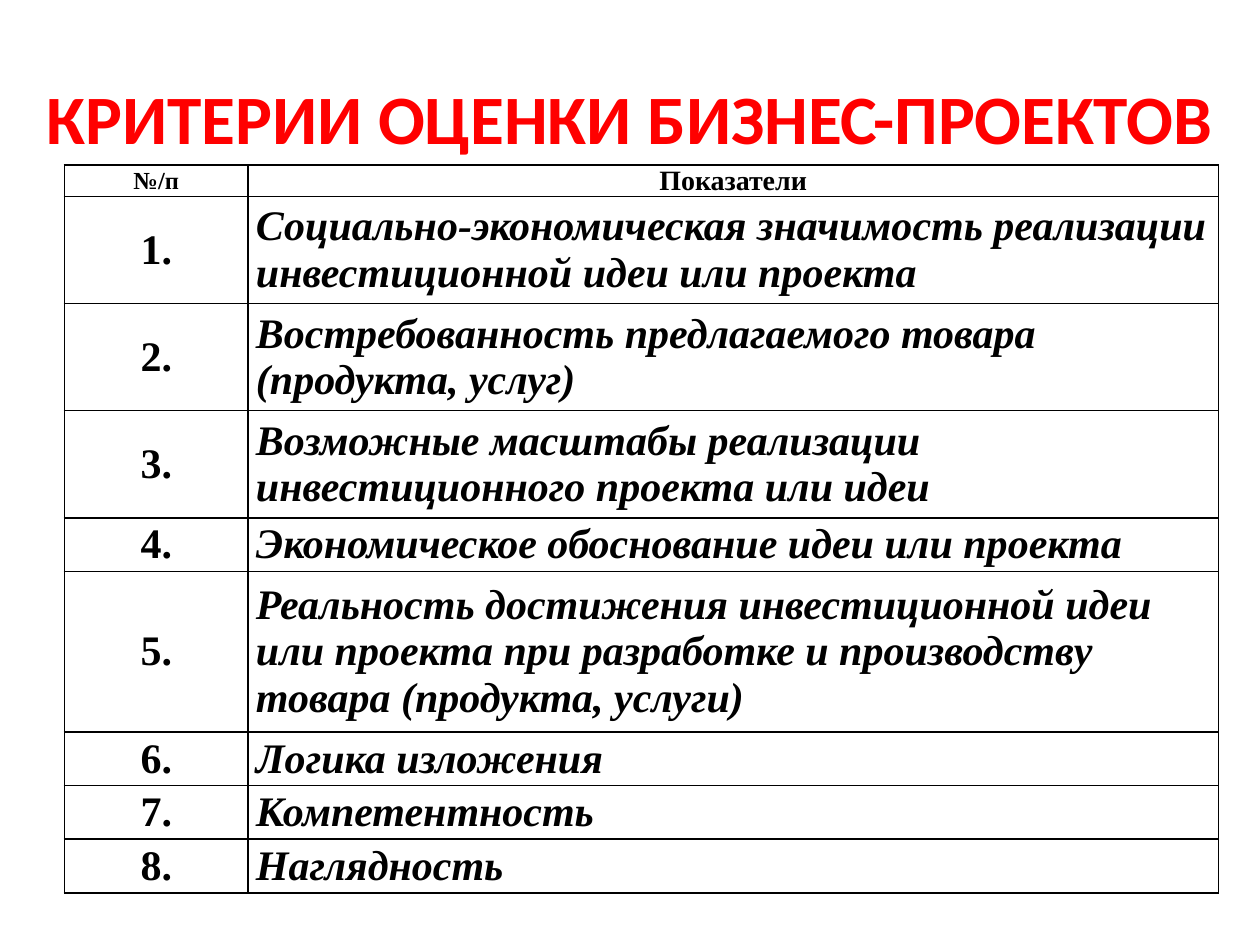
from dataclasses import dataclass

from lxml.etree import SubElement
from pptx import Presentation
from pptx.dml.color import RGBColor
from pptx.enum.text import MSO_ANCHOR, PP_ALIGN
from pptx.oxml.ns import qn
from pptx.util import Cm, Pt


@dataclass(frozen=True)
class Theme:
    red: str = "FF0000"
    ink: str = "000000"
    paper: str = "FFFFFF"
    head: str = "Calibri"
    body: str = "Times New Roman"
    title: float = 39.6
    num: int = 14
    label: int = 16
    text: int = 24
    edge: int = 1


THEME = Theme()
TITLE = "КРИТЕРИИ ОЦЕНКИ БИЗНЕС-ПРОЕКТОВ"
HEADS = [("№/п", THEME.num), ("Показатели", THEME.label)]
ITEMS = [
    ("Социально-экономическая значимость реализации инвестиционной идеи или проекта", 2),
    ("Востребованность предлагаемого товара (продукта, услуг)", 2),
    ("Возможные масштабы реализации инвестиционного проекта или идеи", 2),
    ("Экономическое обоснование идеи или проекта", 1),
    ("Реальность достижения инвестиционной идеи или проекта при разработке "
     "и производству товара (продукта, услуги)", 3),
    ("Логика изложения", 1),
    ("Компетентность", 1),
    ("Наглядность", 1),
]
COLS = [3.7, 19.56]
TOP = 0.62
LINE = 1.08


def apply(obj, form):
    for key, val in form.items():
        setattr(obj, key, val)


def write(frame, text, font, size, color, align, italic=False):
    para = frame.paragraphs[0]
    para.alignment = align
    run = para.add_run()
    run.text = text
    apply(run.font, {"name": font, "size": Pt(size), "bold": True, "italic": italic})
    run.font.color.rgb = RGBColor.from_string(color)


def add_title(slide):
    shape = slide.shapes.title
    apply(shape, {"left": Cm(0.5), "top": Cm(0.76), "width": Cm(24.4), "height": Cm(3.18)})
    apply(shape.text_frame, {"word_wrap": True, "vertical_anchor": MSO_ANCHOR.MIDDLE})
    write(shape.text_frame, TITLE, THEME.head, THEME.title, THEME.red, PP_ALIGN.CENTER)


def add_edges(cell):
    props = cell._tc.get_or_add_tcPr()
    for place, side in enumerate(("lnL", "lnR", "lnT", "lnB")):
        line = SubElement(props, qn(f"a:{side}"), w=str(Pt(THEME.edge)))
        props.remove(line)
        props.insert(place, line)
        fill = SubElement(line, qn("a:solidFill"))
        SubElement(fill, qn("a:srgbClr"), val=THEME.ink)


def fill_cell(cell, text, size, align, italic=False):
    apply(cell, {
        "margin_left": Cm(0.16), "margin_right": Cm(0.16),
        "margin_top": 0, "margin_bottom": 0,
        "vertical_anchor": MSO_ANCHOR.MIDDLE,
    })
    cell.fill.solid()
    cell.fill.fore_color.rgb = RGBColor.from_string(THEME.paper)
    write(cell.text_frame, text, THEME.body, size, THEME.ink, align, italic)
    add_edges(cell)


def add_grid(slide):
    highs = [TOP] + [LINE * lines for _, lines in ITEMS]
    grid = slide.shapes.add_table(
        len(highs), len(COLS), Cm(1.3), Cm(3.33), Cm(sum(COLS)), Cm(sum(highs))
    ).table
    for col, wide in zip(grid.columns, COLS):
        col.width = Cm(wide)
    for row, high in zip(grid.rows, highs):
        row.height = Cm(high)
    for col, (text, size) in enumerate(HEADS):
        fill_cell(grid.cell(0, col), text, size, PP_ALIGN.CENTER)
    for row, (text, _) in enumerate(ITEMS, 1):
        fill_cell(grid.cell(row, 0), f"{row}.", THEME.text, PP_ALIGN.CENTER)
        fill_cell(grid.cell(row, 1), text, THEME.text, PP_ALIGN.LEFT, True)


def main():
    deck = Presentation()
    apply(deck, {"slide_width": Cm(25.4), "slide_height": Cm(19.05)})
    slide = deck.slides.add_slide(deck.slide_layouts[5])
    add_title(slide)
    add_grid(slide)
    deck.save("out.pptx")


if __name__ == "__main__":
    main()
